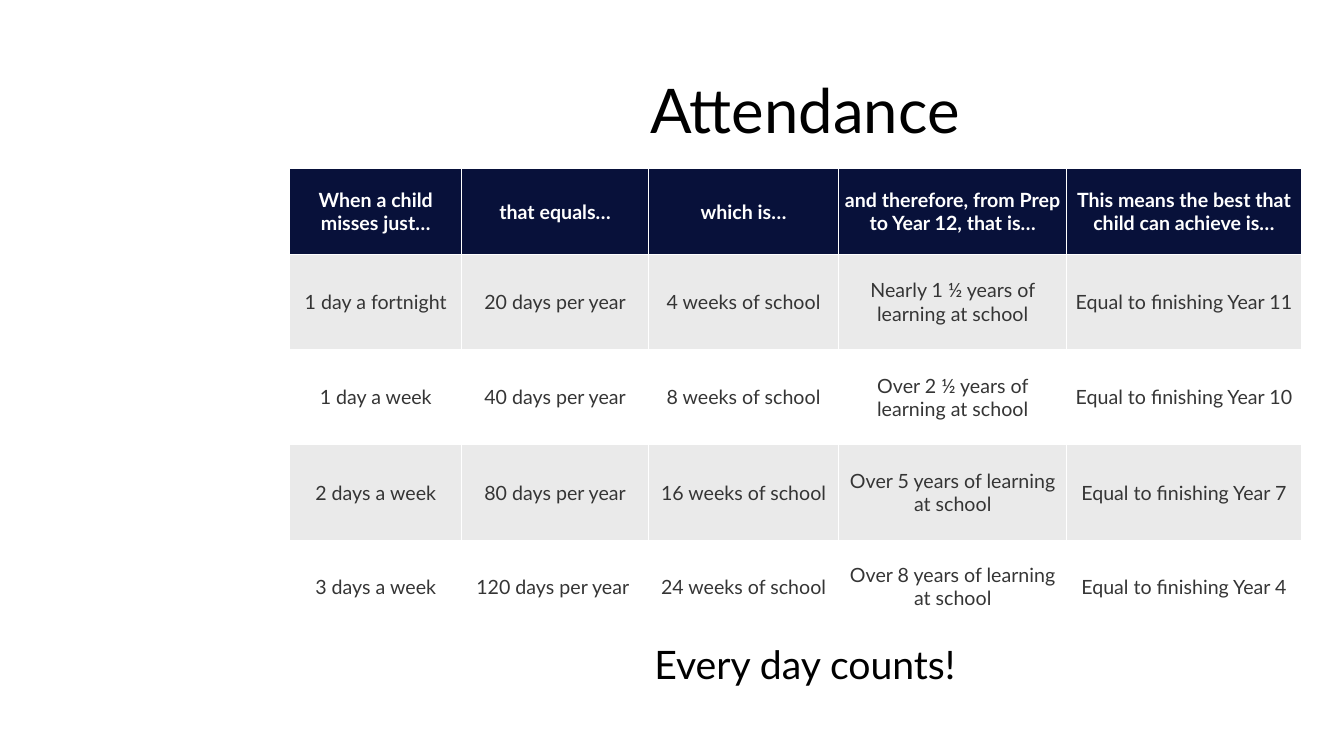
from lxml.etree import SubElement
from pptx import Presentation
from pptx.dml.color import RGBColor
from pptx.enum.text import MSO_ANCHOR as Anchor, PP_ALIGN as Align
from pptx.oxml.ns import qn
from pptx.util import Cm, Pt

BLACK = RGBColor(0x00, 0x00, 0x00)
WHITE = RGBColor(0xFF, 0xFF, 0xFF)
NAVY = RGBColor(0x08, 0x11, 0x3A)
CHARCOAL = RGBColor(0x35, 0x35, 0x35)
PALE_GREY = RGBColor(0xEA, 0xEA, 0xEA)

COLUMN_WIDTHS = [4.34, 4.7, 4.8, 5.74, 5.92]
ROW_HEIGHTS = [2.16, 2.4, 2.4, 2.4, 2.34]
ATTENDANCE = [
    ["When a child misses just…", "that equals…", "which is…",
     "and therefore, from Prep to Year 12, that is…",
     "This means the best that child can achieve is…"],
    ["1 day a fortnight", "20 days per year", "4 weeks of school",
     "Nearly 1 ½ years of learning at school", "Equal to finishing Year 11"],
    ["1 day a week", "40 days per year", "8 weeks of school",
     "Over 2 ½ years of learning at school", "Equal to finishing Year 10"],
    ["2 days a week", "80 days per year", "16 weeks of school",
     "Over 5 years of learning at school", "Equal to finishing Year 7"],
    ["3 days a week", "120 days per year ", "24 weeks of school",
     "Over 8 years of learning at school", "Equal to finishing Year 4"],
]


class SlideBuilder:
    """Holds the text style and the current slide."""

    def __init__(self, page, font_name="Lato"):
        self.page = page
        self.font_name = font_name

    def style(self, para, size, color, bold=False):
        para.alignment = Align.CENTER
        para.font.name = self.font_name
        para.font.size = Pt(size)
        para.font.bold = bold
        para.font.color.rgb = color

    def text(self, words, left, top, width, height, size, anchor):
        box = self.page.shapes.add_textbox(Cm(left), Cm(top), Cm(width), Cm(height))
        frame = box.text_frame
        frame.word_wrap = True
        frame.vertical_anchor = anchor
        para = frame.paragraphs[0]
        para.text = words
        para.line_spacing = 0.9
        self.style(para, size, BLACK)

    def borders(self, cell, color, width):
        properties = cell._tc.get_or_add_tcPr()
        for side in ("a:lnL", "a:lnR", "a:lnT", "a:lnB"):
            line = SubElement(properties, qn(side), w=str(Pt(width)))
            SubElement(SubElement(line, qn("a:solidFill")), qn("a:srgbClr"), val=str(color))

    def cell(self, cell, words, fill, color, bold):
        self.borders(cell, WHITE, 1)
        cell.fill.solid()
        cell.fill.fore_color.rgb = fill
        cell.vertical_anchor = Anchor.MIDDLE
        cell.margin_left = cell.margin_right = Cm(0.1)
        cell.margin_top = cell.margin_bottom = Cm(0.05)
        para = cell.text_frame.paragraphs[0]
        para.text = words
        self.style(para, 14, color, bold)

    def table(self, rows, left, top, widths, heights):
        table = self.page.shapes.add_table(
            len(rows), len(widths), Cm(left), Cm(top),
            Cm(sum(widths)), Cm(sum(heights))).table
        for column, width in zip(table.columns, widths):
            column.width = Cm(width)
        for row, height in zip(table.rows, heights):
            row.height = Cm(height)
        for index, row in enumerate(rows):
            header = index == 0
            fill = NAVY if header else PALE_GREY if index % 2 else WHITE
            for column, words in enumerate(row):
                self.cell(table.cell(index, column), words, fill,
                          WHITE if header else CHARCOAL, header)


def main():
    deck = Presentation()
    deck.slide_width, deck.slide_height = Cm(33.87), Cm(19.05)
    builder = SlideBuilder(deck.slides.add_slide(deck.slide_layouts[6]))

    # Title and closing message share one column
    builder.text("Attendance", 6.71, 1.02, 27.15, 3.68, 44, Anchor.MIDDLE)
    builder.text("Every day counts!", 6.71, 16.15, 27.15, 1.88, 28, Anchor.TOP)

    # Attendance table
    builder.table(ATTENDANCE, 7.3, 4.25, COLUMN_WIDTHS, ROW_HEIGHTS)

    deck.save("out.pptx")


if __name__ == "__main__":
    main()
